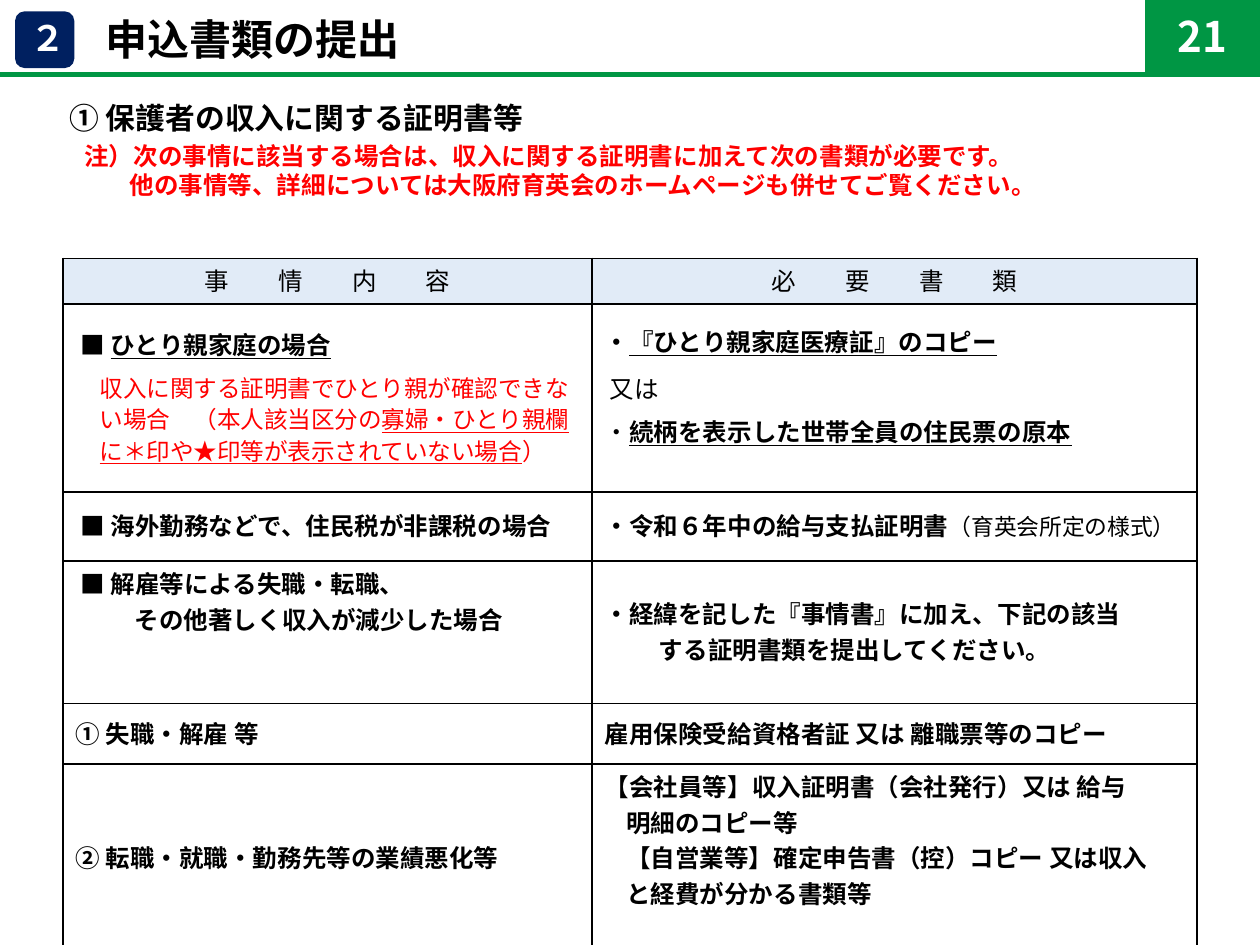
import dataclasses

import pptx
import pptx.dml.color
import pptx.enum.shapes
import pptx.enum.text
import pptx.oxml
import pptx.oxml.ns
import pptx.util
from pptx.util import Inches

SHAPE = pptx.enum.shapes.MSO_SHAPE
ALIGN = pptx.enum.text.PP_ALIGN
ANCHOR = pptx.enum.text.MSO_ANCHOR


@dataclasses.dataclass(frozen=True)
class Theme:
    font: str = "Noto Sans CJK JP"
    black: str = "000000"
    white: str = "FFFFFF"
    red: str = "FF0000"
    navy: str = "002060"
    green: str = "009644"
    header: str = "E1EBF7"
    title: float = 24
    badge: float = 20
    heading: float = 17
    body: float = 14
    detail: float = 13.5
    small: float = 13


THEME = Theme()
BOLD = {"bold": True}
KEY = {"bold": True, "underline": True}
DETAIL = {"size": THEME.detail, "color": THEME.red}
DETAIL_KEY = {**DETAIL, "underline": True}
SPACED = {"tracking": 28}


def rgb(value):
    return pptx.dml.color.RGBColor.from_string(value)


def xml(tag, **attributes):
    element = pptx.oxml.parse_xml(f"<{tag} {pptx.oxml.ns.nsdecls('a')}/>")
    for name, value in attributes.items():
        element.set(name, str(value))
    return element


def add_span(para, text, size=THEME.body, color=THEME.black, bold=False,
             underline=False, tracking=0):
    span = para.add_run()
    span.text = text
    font = span.font
    font.size = pptx.util.Pt(size)
    font.bold, font.underline = bold, underline
    font.color.rgb = rgb(color)
    font.name = THEME.font
    properties = span._r.get_or_add_rPr()
    properties.append(xml("a:ea", typeface=THEME.font))
    if tracking:
        properties.set("spc", str(tracking * 100))


def line(*spans, indent=0, before=0, spacing=None, align=ALIGN.LEFT):
    """Describe one paragraph; each span is a (text, format) pair."""
    return spans, indent, before, spacing, align


def write(frame, lines, anchor=ANCHOR.MIDDLE):
    frame.word_wrap = True
    frame.vertical_anchor = anchor
    for number, (spans, indent, before, spacing, align) in enumerate(lines):
        para = frame.add_paragraph() if number else frame.paragraphs[0]
        para.alignment = align
        para.space_before = pptx.util.Pt(before)
        if spacing:
            para.line_spacing = pptx.util.Pt(spacing)
        properties = para._p.get_or_add_pPr()
        properties.set("marL", str(Inches(indent)))
        properties.set("indent", "0")
        properties.append(xml("a:buNone"))
        for text, style in spans:
            add_span(para, text, **style)


def set_margins(target, top, bottom):
    target.margin_left = target.margin_right = Inches(0.1)
    target.margin_top, target.margin_bottom = Inches(top), Inches(bottom)


def fill_placeholder(box, place, lines, anchor, top):
    box.left, box.top, box.width, box.height = map(Inches, place)
    box.text_frame.auto_size = pptx.enum.text.MSO_AUTO_SIZE.NONE
    set_margins(box.text_frame, top, 0.05)
    write(box.text_frame, lines, anchor)


def add_label(page, kind, place, text, size, fill, outline=None):
    box = page.shapes.add_shape(kind, *map(Inches, place))
    box.shadow.inherit = False
    box.fill.solid()
    box.fill.fore_color.rgb = rgb(fill)
    if outline:
        box.line.color.rgb = rgb(outline)
        box.line.width = pptx.util.Pt(3)
    else:
        box.line.fill.background()
    set_margins(box.text_frame, 0.02, 0.05)
    style = {"size": size, "color": THEME.white, "bold": True}
    write(box.text_frame, [line((text, style), align=ALIGN.CENTER)])


def add_rule(page, top):
    rule = page.shapes.add_connector(
        pptx.enum.shapes.MSO_CONNECTOR.STRAIGHT,
        0, Inches(top), Inches(10), Inches(top))
    rule.line.color.rgb = rgb(THEME.green)
    rule.line.width = pptx.util.Pt(3)
    rule._element.spPr.append(xml("a:effectLst"))


def add_borders(cell):
    properties = cell._tc.get_or_add_tcPr()
    for position, side in enumerate(("lnL", "lnR", "lnT", "lnB")):
        border = xml(f"a:{side}", w=pptx.util.Pt(1))
        paint = xml("a:solidFill")
        paint.append(xml("a:srgbClr", val=THEME.black))
        border.append(paint)
        properties.insert(position, border)


def add_grid(page, place, widths, rows):
    """Each row is (height, cells); a cell is (lines, anchor, bottom margin)."""
    frame = page.shapes.add_table(len(rows), len(widths), *map(Inches, place))
    table = frame.table
    table.first_row = table.horz_banding = False
    for column, width in zip(table.columns, widths):
        column.width = Inches(width)
    for row_number, (height, contents) in enumerate(rows):
        table.rows[row_number].height = Inches(height)
        for column_number, (lines, anchor, bottom) in enumerate(contents):
            cell = table.cell(row_number, column_number)
            set_margins(cell, 0.03, bottom)
            write(cell.text_frame, lines)
            cell.vertical_anchor = anchor
            if row_number:
                cell.fill.background()
            else:
                cell.fill.solid()
                cell.fill.fore_color.rgb = rgb(THEME.header)
            add_borders(cell)


def entry(*lines, anchor=ANCHOR.MIDDLE, bottom=0.05):
    return lines, anchor, bottom


def header(text):
    return entry(line((text[:-1], SPACED), (text[-1], {}), align=ALIGN.CENTER))


def case(text, style):
    return line(("■ ", {}), (text, style), indent=0.04)


def table_rows():
    return [
        (0.36, [header("事情内容"), header("必要書類")]),
        (1.49, [
            entry(
                case("ひとり親家庭の場合", KEY),
                line(("収入に関する証明書でひとり親が確認できな", DETAIL),
                     indent=0.19, before=6, spacing=18),
                line(("い場合　（本人該当区分の", DETAIL),
                     ("寡婦・ひとり親欄", DETAIL_KEY), indent=0.19, spacing=18),
                line(("に＊印や★印等が表示されていない場合", DETAIL_KEY),
                     ("）", DETAIL), indent=0.19, spacing=18)),
            entry(
                line(("・", BOLD), ("『ひとり親家庭医療証』のコピー", KEY)),
                line(("又は", {}), indent=0.04, before=6),
                line(("・", {}), ("続柄を表示した世帯全員の住民票の原本", KEY),
                     before=4.5),
                bottom=0.22)]),
        (0.55, [
            entry(case("海外勤務などで、住民税が非課税の場合", BOLD)),
            entry(line(("・令和６年中の給与支払証明書", BOLD),
                       ("（育英会所定の様式）", {"size": THEME.small})))]),
        (1.13, [
            entry(case("解雇等による失職・転職、", BOLD),
                  line(("その他著しく収入が減少した場合", BOLD), indent=0.47),
                  anchor=ANCHOR.TOP),
            entry(line(("・経緯を記した『事情書』に加え、下記の該当", BOLD)),
                  line(("する証明書類を提出してください。", BOLD), indent=0.43))]),
        (0.48, [
            entry(line(("① 失職・解雇 等", BOLD))),
            entry(line(("雇用保険受給資格者証 又は 離職票等のコピー", BOLD)))]),
        (1.49, [
            entry(line(("② 転職・就職・勤務先等の業績悪化等", BOLD))),
            entry(line(("【会社員等】収入証明書（会社発行）又は 給与", BOLD)),
                  *(line((text, BOLD), indent=0.17) for text in (
                      "明細のコピー等",
                      "【自営業等】確定申告書（控）コピー 又は収入",
                      "と経費が分かる書類等")),
                  bottom=0.33)]),
    ]


def main():
    deck = pptx.Presentation()
    deck.slide_width, deck.slide_height = Inches(10), Inches(7.5)
    page = deck.slides.add_slide(deck.slide_layouts[1])

    # Title band
    title = line(("申込書類の提出", {"size": THEME.title, "bold": True}))
    fill_placeholder(page.shapes.title, (0.74, 0.05, 4.34, 0.49), [title],
                     ANCHOR.MIDDLE, 0.08)
    add_label(page, SHAPE.ROUNDED_RECTANGLE, (0.12, 0.09, 0.47, 0.45), "２",
              THEME.badge, THEME.navy)
    add_rule(page, 0.59)
    add_label(page, SHAPE.RECTANGLE, (9.11, 0, 0.87, 0.59), "21",
              THEME.title, THEME.green, THEME.green)

    # Heading and note
    note = {"color": THEME.red, "bold": True}
    fill_placeholder(page.placeholders[1], (0.35, 0.59, 9.33, 1.16), [
        line(("① 保護者の収入に関する証明書等",
              {"size": THEME.heading, "bold": True}), indent=0.1),
        line(("注）次の事情に該当する場合は、収入に関する証明書に加えて次の書類が必要です。",
              note), indent=0.22, before=3),
        line(("他の事情等、詳細については大阪府育英会のホームページも併せてご覧ください。",
              note), indent=0.58),
    ], ANCHOR.TOP, 0.2)

    # Required documents by circumstance
    add_grid(page, (0.5, 2.05, 9, 5.5), (4.2, 4.8), table_rows())
    deck.save("out.pptx")


if __name__ == "__main__":
    main()
